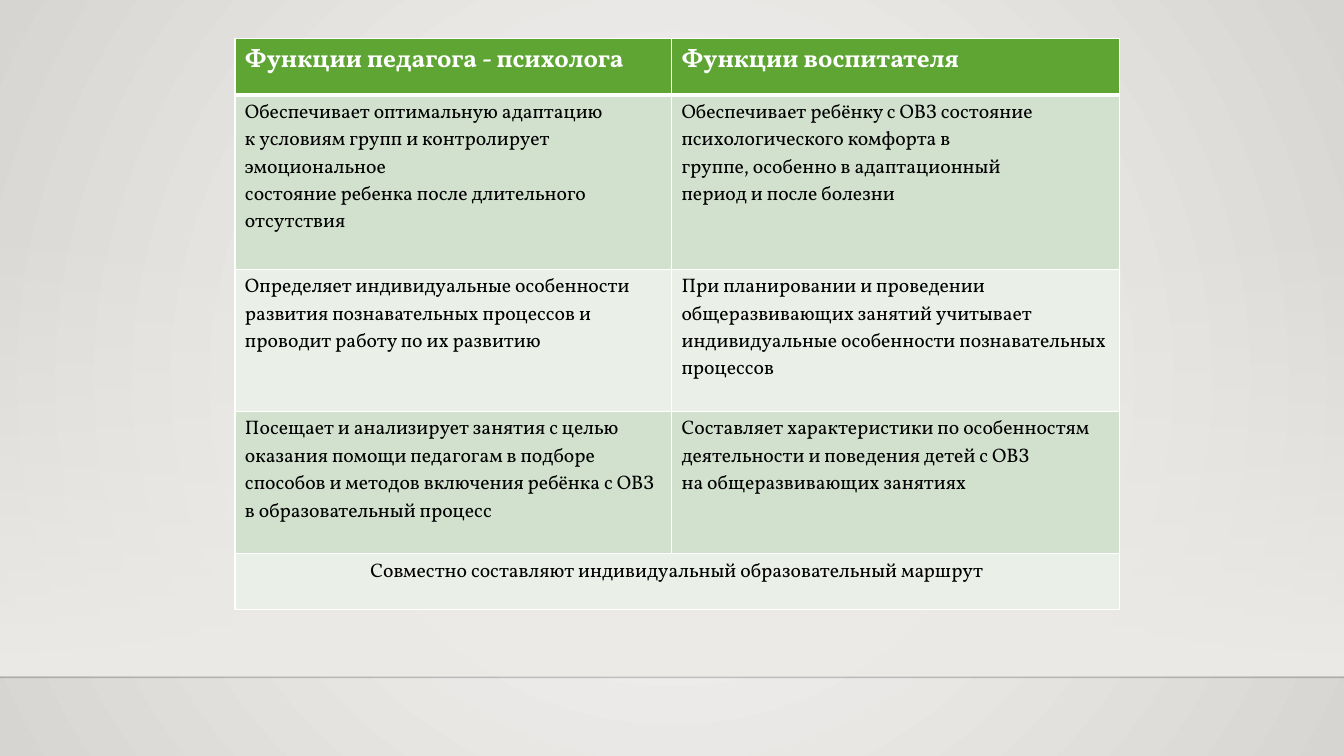
"""Builds a slide with a table of psychologist and teacher functions."""
import pptx
import pptx.dml.color
import pptx.enum.shapes
import pptx.enum.text
import pptx.oxml
import pptx.oxml.ns
import pptx.util

Inches = pptx.util.Inches
Pt = pptx.util.Pt
RGBColor = pptx.dml.color.RGBColor
qn = pptx.oxml.ns.qn

WHITE = RGBColor(0xFF, 0xFF, 0xFF)
BLACK = RGBColor(0x00, 0x00, 0x00)
LINE = RGBColor(0x00, 0x00, 0x01)
GREEN = RGBColor(0x5F, 0xA5, 0x34)
BANDS = [RGBColor(0xEA, 0xF0, 0xE8), RGBColor(0xD2, 0xE1, 0xCE)]
GLOW = RGBColor(0xFA, 0xFA, 0xF9)
EDGE = RGBColor(0xD7, 0xD5, 0xD2)
WALL = RGBColor(0xED, 0xEB, 0xE7)

CIRCLE = '<a:path path="circle"><a:fillToRect l="50000" t="50000" r="50000" b="50000"/></a:path>'
DOWN = '<a:lin ang="5400000" scaled="0"/>'

COLUMNS = [4.33, 4.44]
HEIGHTS = [0.56, 1.73, 1.41, 1.41, 0.56]
ROWS = [
    ["Функции педагога - психолога", "Функции воспитателя"],
    ["Обеспечивает оптимальную адаптацию\n"
     "к условиям групп и контролирует эмоциональное\n"
     "состояние ребенка после длительного отсутствия",
     "Обеспечивает ребёнку с ОВЗ состояние психологического комфорта в\n"
     "группе, особенно в адаптационный\n"
     "период и после болезни"],
    ["Определяет индивидуальные особенности развития познавательных "
     "процессов и проводит работу по их развитию",
     "При планировании и проведении общеразвивающих занятий учитывает "
     "индивидуальные особенности познавательных процессов"],
    ["Посещает и анализирует занятия с целью оказания помощи педагогам в подборе "
     "способов и методов включения ребёнка с ОВЗ в образовательный процесс",
     "Составляет характеристики по особенностям деятельности и поведения детей с ОВЗ\n"
     "на общеразвивающих занятиях"],
    ["Совместно составляют индивидуальный образовательный маршрут"],
]


def element(xml):
    head, tail = xml.split(" ", 1)
    return pptx.oxml.parse_xml(f"{head} {pptx.oxml.ns.nsdecls('a')} {tail}")


class Deck:
    def __init__(self):
        self.font = "Vollkorn"
        self.prs = pptx.Presentation()
        self.prs.slide_width = Inches(13.33)
        self.prs.slide_height = Inches(7.5)
        self.s = self.prs.slides.add_slide(self.prs.slide_layouts[6])

    def gradient(self, parent, start, end, direction, alpha=100):
        old = parent.find(qn("a:gradFill"))
        parent.replace(old, element(
            f'<a:gradFill rotWithShape="1"><a:gsLst><a:gs pos="0"><a:srgbClr val="{start}">'
            f'<a:alpha val="{alpha * 1000}"/></a:srgbClr></a:gs><a:gs pos="100000">'
            f'<a:srgbClr val="{end}"/></a:gs></a:gsLst>{direction}</a:gradFill>'))

    def background(self, start, end):
        self.s.background.fill.gradient()
        self.gradient(self.s.element.find(".//" + qn("p:bgPr")), start, end, CIRCLE)

    def fade(self, left, top, width, height, color):
        sp = self.s.shapes.add_shape(
            pptx.enum.shapes.MSO_SHAPE.RECTANGLE,
            Inches(left), Inches(top), Inches(width), Inches(height))
        sp.shadow.inherit = False
        sp.line.fill.background()
        sp.fill.gradient()
        self.gradient(sp.element.spPr, color, color, DOWN, 0)

    def line(self, x1, y1, x2, y2, color, width, alpha):
        sp = self.s.shapes.add_connector(
            pptx.enum.shapes.MSO_CONNECTOR.STRAIGHT,
            Inches(x1), Inches(y1), Inches(x2), Inches(y2))
        sp.line.color.rgb = color
        sp.line.width = Pt(width)
        sp.element.find(".//" + qn("a:srgbClr")).append(
            element(f'<a:alpha val="{alpha * 1000}"/>'))
        sp.element.spPr.append(element("<a:effectLst />"))

    def cell(self, cell, text, row):
        header = row == 0
        cell.fill.solid()
        cell.fill.fore_color.rgb = GREEN if header else BANDS[row % 2]
        widths = {"L": 1, "R": 1, "T": 3 if row == 1 else 1, "B": 3 if header else 1}
        for i, (side, width) in enumerate(widths.items()):
            cell._tc.tcPr.insert(i, element(
                f'<a:ln{side} w="{Pt(width)}"><a:solidFill><a:srgbClr val="{WHITE}"/>'
                f'</a:solidFill></a:ln{side}>'))
        tf = cell.text_frame
        tf.text = text
        for p in tf.paragraphs:
            p.font.name = self.font
            p.font.size = Pt(18 if header else 14)
            p.font.bold = header
            p.font.color.rgb = WHITE if header else BLACK
            if cell.is_merge_origin:
                p.alignment = pptx.enum.text.PP_ALIGN.CENTER

    def table(self, left, top, columns, heights, rows):
        table = self.s.shapes.add_table(
            len(rows), len(columns), Inches(left), Inches(top),
            Inches(sum(columns)), Inches(sum(heights))).table
        for column, width in zip(table.columns, columns):
            column.width = Inches(width)
        for i, (height, texts) in enumerate(zip(heights, rows)):
            table.rows[i].height = Inches(height)
            if len(texts) < len(columns):
                table.cell(i, 0).merge(table.cell(i, len(columns) - 1))
            for j in range(len(columns)):
                self.cell(table.cell(i, j), texts[j] if j < len(texts) else "", i)


def main():
    deck = Deck()
    deck.background(GLOW, EDGE)
    deck.fade(0, 2.2, 13.33, 4.5, WALL)
    deck.line(0, 6.72, 13.33, 6.72, LINE, 1, 20)
    deck.table(2.33, 0.38, COLUMNS, HEIGHTS, ROWS)
    deck.prs.save("out.pptx")


if __name__ == "__main__":
    main()
